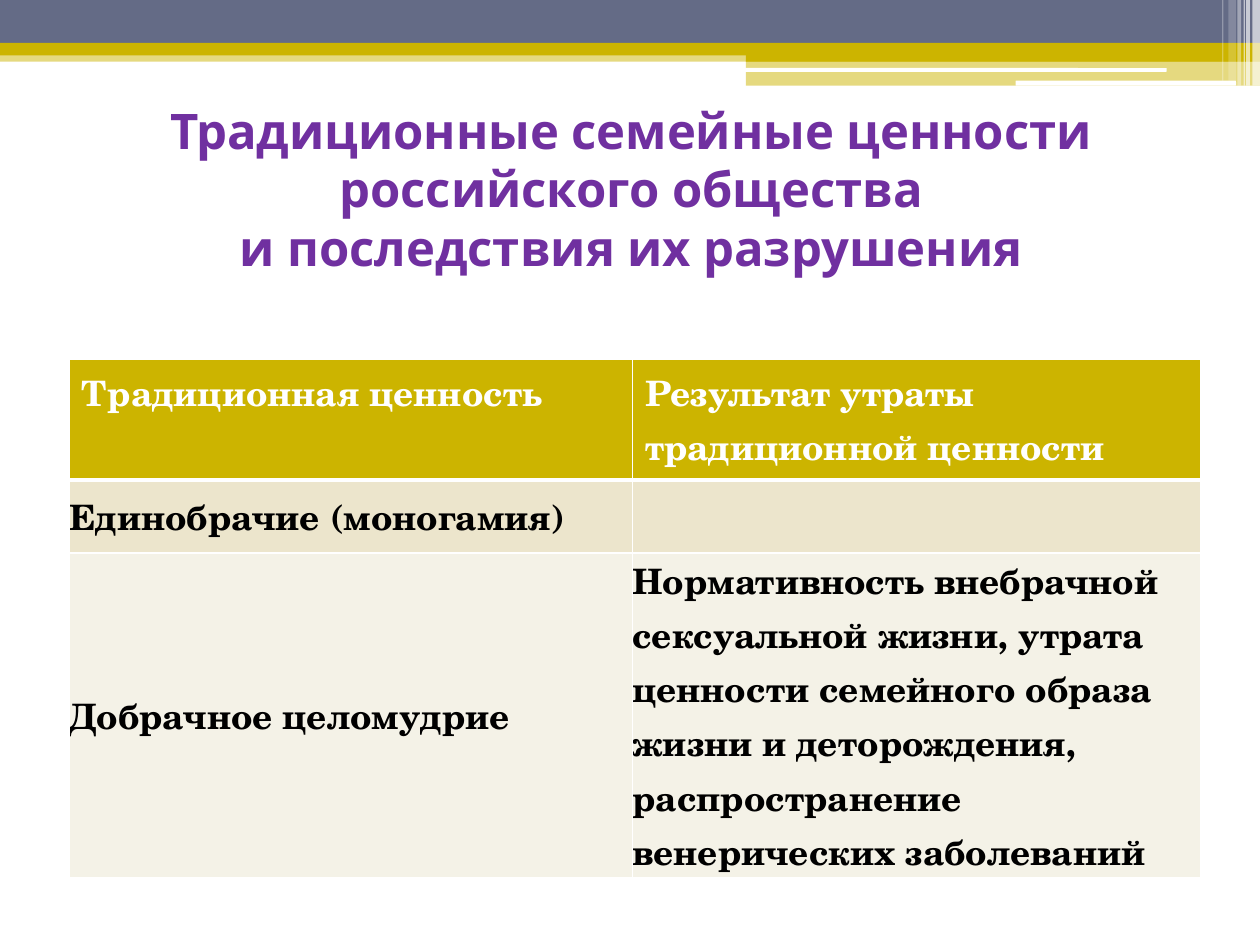
from lxml.etree import SubElement
from pptx import Presentation
from pptx.dml.color import RGBColor
from pptx.enum.shapes import MSO_SHAPE
from pptx.enum.text import MSO_ANCHOR, MSO_AUTO_SIZE, PP_ALIGN
from pptx.oxml.ns import qn
from pptx.util import Inches, Pt

GOLD = RGBColor(0xCC, 0xB4, 0x00)
SLATE = RGBColor(0x64, 0x6B, 0x86)
WHITE = RGBColor(0xFF, 0xFF, 0xFF)
BLACK = RGBColor(0x00, 0x00, 0x00)
PURPLE = RGBColor(0x70, 0x30, 0xA0)
SAND = RGBColor(0xEC, 0xE5, 0xCC)
CREAM = RGBColor(0xF4, 0xF2, 0xE7)

TITLE = ("Традиционные семейные ценности\vроссийского общества\v"
         "и последствия их разрушения")
ROWS = [
    ("Традиционная ценность", "Результат утраты традиционной ценности"),
    ("Единобрачие (моногамия)", ""),
    ("Добрачное целомудрие",
     "Нормативность внебрачной сексуальной жизни, утрата ценности семейного "
     "образа жизни и деторождения, распространение венерических заболеваний"),
]
ROW_FILLS = [GOLD, SAND, CREAM]
COL_WIDTHS = [4.47, 4.51]
ROW_HEIGHTS = [0.94, 0.58, 2.34]
BANDS = [
    (0, 0.4, 10, 0.09, GOLD, 50),
    (0, 0, 10, 0.34, SLATE, 100),
    (0, 0.34, 10, 0.1, GOLD, 100),
    (5.92, 0.39, 4.08, 0.1, GOLD, 100),
    (5.92, 0.48, 4.08, 0.2, GOLD, 50),
]
ROUNDED_BARS = [(5.91, 0.54, 3.35, 0.03), (8.06, 0.64, 1.75, 0.04)]
STRIPES = [
    (9.94, 0.06, 0.68, 65),
    (9.89, 0.03, 0.68, 65),
    (9.87, 0.01, 0.68, 60),
    (9.82, 0.03, 0.68, 40),
    (9.75, 0.06, 0.64, 20),
    (9.7, 0.01, 0.64, 30),
]


def add_bar(s, x, y, w, h, color, opacity=100, kind=MSO_SHAPE.RECTANGLE):
    sp = s.shapes.add_shape(kind, Inches(x), Inches(y), Inches(w), Inches(h))
    sp.shadow.inherit = False
    sp.line.fill.background()
    sp.fill.solid()
    sp.fill.fore_color.rgb = color
    if opacity < 100:
        clr = sp._element.spPr.find(qn("a:solidFill"))[0]
        SubElement(clr, qn("a:alpha"), val=str(opacity * 1000))


def write(tf, text, font, size, color, align=PP_ALIGN.LEFT):
    tf.word_wrap = True
    tf.text = text
    p = tf.paragraphs[0]
    p.alignment = align
    for f in [p.font] + [r.font for r in p.runs]:
        f.name, f.size, f.bold = font, Pt(size), True
        f.color.rgb = color


def set_borders(cell, **widths):
    tc_pr = cell._tc.get_or_add_tcPr()
    for i, (side, width) in enumerate(widths.items()):
        ln = tc_pr.makeelement(qn(f"a:ln{side}"), {"w": str(Pt(width))})
        fill = SubElement(ln, qn("a:solidFill"))
        SubElement(fill, qn("a:srgbClr"), val=str(WHITE))
        tc_pr.insert(i, ln)


def add_values_table(s):
    frame = s.shapes.add_table(len(ROWS), len(COL_WIDTHS), Inches(0.55), Inches(2.85),
                               Inches(sum(COL_WIDTHS)), Inches(sum(ROW_HEIGHTS)))
    table = frame.table
    table.horz_banding = False
    for col, width in zip(table.columns, COL_WIDTHS):
        col.width = Inches(width)
    for i, (row, height) in enumerate(zip(table.rows, ROW_HEIGHTS)):
        row.height = Inches(height)
        for cell, text in zip(row.cells, ROWS[i]):
            write(cell.text_frame, text, "TeX Gyre Schola", 20,
                  BLACK if i else WHITE)
            cell.fill.solid()
            cell.fill.fore_color.rgb = ROW_FILLS[i]
            if i:
                cell.vertical_anchor = MSO_ANCHOR.MIDDLE
                cell.margin_left = cell.margin_right = 0
                cell.margin_top = cell.margin_bottom = 0
            set_borders(cell, L=1, R=1, T=3 if i == 1 else 1, B=1 if i else 3)


def main():
    """Build the slide on traditional family values."""
    prs = Presentation()
    prs.slide_width, prs.slide_height = Inches(10), Inches(7.5)
    s = prs.slides.add_slide(prs.slide_layouts[5])

    for band in BANDS:
        add_bar(s, *band)
    for bar in ROUNDED_BARS:
        add_bar(s, *bar, WHITE, kind=MSO_SHAPE.ROUNDED_RECTANGLE)
    for x, w, h, opacity in STRIPES:
        add_bar(s, x, 0, w, h, WHITE, opacity)

    title = s.shapes.title
    title.left, title.top = Inches(0.51), Inches(0.91)
    title.width, title.height = Inches(9), Inches(1.17)
    tf = title.text_frame
    tf.auto_size = MSO_AUTO_SIZE.NONE
    tf.vertical_anchor = MSO_ANCHOR.MIDDLE
    write(tf, TITLE, "Karla", 28, PURPLE, align=PP_ALIGN.CENTER)

    add_values_table(s)
    prs.save("out.pptx")


if __name__ == "__main__":
    main()
